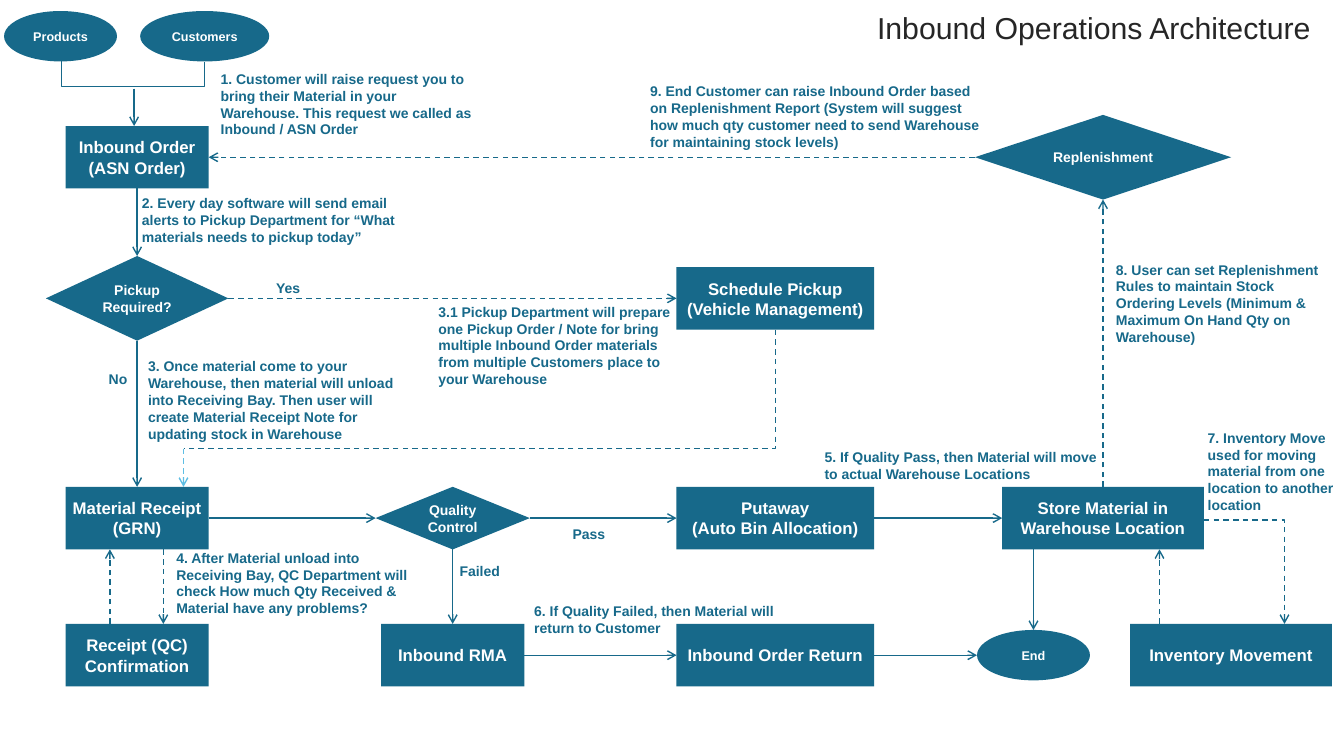
import pptx
import pptx.dml.color
import pptx.enum.dml
import pptx.enum.shapes
import pptx.enum.text
import pptx.oxml
import pptx.oxml.ns
import pptx.util

SHAPES = pptx.enum.shapes.MSO_SHAPE
CONNECTORS = pptx.enum.shapes.MSO_CONNECTOR
ALIGN = pptx.enum.text.PP_ALIGN
MIDDLE = pptx.enum.text.MSO_ANCHOR.MIDDLE
inch = pptx.util.Inches

TEAL, SKY, WHITE, CHARCOAL = "17698A", "5EBEE4", "FFFFFF", "262626"
COLUMNS = {"products": 0.6, "intake": 1.36, "customers": 2.03, "quality": 4.49,
           "putaway": 7.69, "end": 10.25, "store": 10.94, "movement": 12.21}
ROWS = {"sources": 0.36, "order": 1.56, "pickup": 2.96, "receipt": 5.14, "return": 6.5}
BOX_HEIGHT = 0.62
STYLES = {"ellipse": (SHAPES.OVAL, 9),
          "box": (SHAPES.RECTANGLE, 12),
          "decision": (SHAPES.FLOWCHART_DECISION, 10)}
TOP, LEFT, BOTTOM, RIGHT = range(4)

STEPS = [
    ("products", "ellipse", "Products", "products", "sources", 1.12, 0.5),
    ("customers", "ellipse", "Customers", "customers", "sources", 1.28, 0.5),
    ("order", "box", "Inbound Order\n(ASN Order)", "intake", "order", 1.42, BOX_HEIGHT),
    ("pickup", "decision", "Pickup Required?", "intake", "pickup", 1.81, 0.84),
    ("receipt", "box", "Material Receipt (GRN)", "intake", "receipt", 1.42, BOX_HEIGHT),
    ("confirmation", "box", "Receipt (QC) Confirmation", "intake", "return", 1.42, BOX_HEIGHT),
    ("schedule", "box", "Schedule Pickup\n(Vehicle Management)", "putaway", "pickup", 1.96, BOX_HEIGHT),
    ("quality", "decision", "Quality Control", "quality", "receipt", 1.53, 0.84 * 0.74),
    ("rma", "box", "Inbound RMA", "quality", "return", 1.42, BOX_HEIGHT),
    ("putaway", "box", "Putaway\n(Auto Bin Allocation)", "putaway", "receipt", 1.96, BOX_HEIGHT),
    ("returned", "box", "Inbound Order Return", "putaway", "return", 1.96, BOX_HEIGHT),
    ("store", "box", "Store Material in Warehouse Location", "store", "receipt", 2, BOX_HEIGHT),
    ("replenishment", "decision", "Replenishment", "store", "order", 2.54, 0.84),
    ("movement", "box", "Inventory Movement", "movement", "return", 2, BOX_HEIGHT),
    ("end", "ellipse", "End", "end", "return", 1.12, 0.5),
]

LINKS = [
    ("order", BOTTOM, "pickup", TOP, False),
    ("pickup", BOTTOM, "receipt", TOP, False),
    ("receipt", RIGHT, "quality", LEFT, False),
    ("quality", RIGHT, "putaway", LEFT, False),
    ("quality", BOTTOM, "rma", TOP, False),
    ("putaway", RIGHT, "store", LEFT, False),
    ("rma", RIGHT, "returned", LEFT, False),
    ("store", TOP, "replenishment", BOTTOM, True),
    ("replenishment", LEFT, "order", RIGHT, True),
    ("pickup", RIGHT, "schedule", LEFT, True),
]

ARROWS = [
    ((1.33, 0.88), (1.33, 1.25), TEAL, False),
    ((1.62, 5.45), (1.62, 6.19), TEAL, True),
    ((1.09, 6.19), (1.09, 5.45), TEAL, True),
    ((1.82, 4.45), (1.82, 4.83), SKY, True),
    ((10.25, 5.45), (10.25, 6.25), TEAL, False),
    ((8.67, 6.5), (9.69, 6.5), TEAL, False),
    ((11.5, 6.19), (11.5, 5.45), TEAL, True),
]

NOTES = [
    (2.09, 0.65, 2.69, 4, "1. Customer will raise request you to bring their Material in your "
     "Warehouse. This request we called as Inbound / ASN Order"),
    (1.31, 1.88, 2.89, 3, "2. Every day software will send email alerts to Pickup Department for "
     "“What materials needs to pickup today”"),
    (4.25, 2.96, 2.56, 5, "3.1 Pickup Department will prepare one Pickup Order / Note for bring "
     "multiple Inbound Order materials from multiple Customers place to your Warehouse"),
    (2.64, 2.72, 0.62, 1, "Yes"),
    (0.98, 3.63, 0.62, 1, "No"),
    (1.37, 3.5, 2.81, 5, "3. Once material come to your Warehouse, then material will unload into "
     "Receiving Bay. Then user will create Material Receipt Note for updating stock in Warehouse"),
    (4.46, 5.53, 0.62, 1, "Failed"),
    (5.58, 5.16, 0.62, 1, "Pass"),
    (1.65, 5.4, 2.59, 4, "4. After Material unload into Receiving Bay, QC Department will check "
     "How much Qty Received & Material have any problems?"),
    (8.08, 4.4, 2.97, 2, "5. If Quality Pass, then Material will move to actual Warehouse Locations"),
    (5.2, 5.93, 2.97, 2, "6. If Quality Failed, then Material will return to Customer"),
    (11.88, 4.21, 1.45, 5, "7. Inventory Move used for moving material from one location to "
     "another location"),
    (10.97, 2.54, 2.36, 5, "8. User can set Replenishment Rules to maintain Stock Ordering Levels "
     "(Minimum & Maximum On Hand Qty on Warehouse)"),
    (6.35, 0.77, 3.55, 4, "9. End Customer can raise Inbound Order based on Replenishment Report "
     "(System will suggest how much qty customer need to send Warehouse for maintaining stock levels)"),
]


def rgb(code):
    return pptx.dml.color.RGBColor.from_string(code)


def write(frame, text, size, color, bold=True, align=ALIGN.LEFT):
    frame.word_wrap = True
    paragraph = frame.paragraphs[0]
    paragraph.alignment = align
    for number, line in enumerate(text.split("\n")):
        if number:
            paragraph.add_line_break()
        run = paragraph.add_run()
        run.text = line
        run.font.name = "Arial"
        run.font.size = pptx.util.Pt(size)
        run.font.bold = bold
        run.font.color.rgb = rgb(color)


def add_step(slide, style, text, column, row, width, height):
    kind, size = STYLES[style]
    step = slide.shapes.add_shape(
        kind, inch(COLUMNS[column] - width / 2), inch(ROWS[row] - height / 2),
        inch(width), inch(height))
    step.shadow.inherit = False
    step.fill.solid()
    step.fill.fore_color.rgb = rgb(TEAL)
    step.line.fill.background()
    frame = step.text_frame
    frame.margin_left = frame.margin_right = inch(0.05)
    frame.vertical_anchor = MIDDLE
    write(frame, text, size, WHITE, align=ALIGN.CENTER)
    return step


def add_line(slide, start, end, color=TEAL, dashed=False, arrow=True, kind=CONNECTORS.STRAIGHT):
    line = slide.shapes.add_connector(kind, *map(inch, (*start, *end)))
    line.line.color.rgb = rgb(color)
    line.line.width = pptx.util.Pt(1)
    if dashed:
        line.line.dash_style = pptx.enum.dml.MSO_LINE.DASH
    if arrow:
        head = pptx.oxml.parse_xml(
            f'<a:tailEnd {pptx.oxml.ns.nsdecls("a")} type="arrow"/>')
        line.line._get_or_add_ln().append(head)
    line._element.spPr.append(
        pptx.oxml.parse_xml(f'<a:effectLst {pptx.oxml.ns.nsdecls("a")}/>'))
    return line


def add_elbow(slide, start, end, preset, turn=0, flip=False, bend=None, dashed=True, arrow=True):
    width, height = abs(end[0] - start[0]), abs(end[1] - start[1])
    if turn:
        width, height = height, width
    middle = (start[0] + end[0]) / 2, (start[1] + end[1]) / 2
    corner = middle[0] - width / 2, middle[1] - height / 2
    elbow = add_line(slide, corner, (corner[0] + width, corner[1] + height),
                     dashed=dashed, arrow=arrow, kind=CONNECTORS.ELBOW)
    properties = elbow._element.spPr
    frame = properties.get_or_add_xfrm()
    frame.set("rot", str(turn * 60000))
    if flip:
        frame.set("flipH", "1")
    geometry = properties.find(pptx.oxml.ns.qn("a:prstGeom"))
    geometry.set("prst", preset)
    if bend is not None:
        geometry.find(pptx.oxml.ns.qn("a:avLst")).append(pptx.oxml.parse_xml(
            f'<a:gd {pptx.oxml.ns.nsdecls("a")} name="adj1" fmla="val {bend * 100000}"/>'))


def add_note(slide, left, top, width, lines, text):
    note = slide.shapes.add_textbox(*map(inch, (left, top, width, 0.1 + 0.17 * lines)))
    write(note.text_frame, text, 10, TEAL)


def add_title(slide, text):
    title = slide.shapes.title
    title.left, title.top, title.width, title.height = map(inch, (8.37, 0, 4.96, 0.63))
    title.text_frame.vertical_anchor = MIDDLE
    write(title.text_frame, text, 21.6, CHARCOAL, bold=False, align=ALIGN.CENTER)
    title.text_frame.paragraphs[0].line_spacing = 0.7


def main():
    deck = pptx.Presentation()
    deck.slide_width, deck.slide_height = inch(13.33), inch(7.5)
    slide = deck.slides.add_slide(deck.slide_layouts[5])
    steps = {name: add_step(slide, *details) for name, *details in STEPS}
    for source, exit_side, target, entry_side, dashed in LINKS:
        link = add_line(slide, (0, 0), (1, 1), dashed=dashed)
        link.begin_connect(steps[source], exit_side)
        link.end_connect(steps[target], entry_side)
    for start, end, color, dashed in ARROWS:
        add_line(slide, start, end, color, dashed)
    add_elbow(slide, (0.61, 0.61), (2.03, 0.62), "bentConnector3", turn=270, flip=True,
              bend=25, dashed=False, arrow=False)
    add_elbow(slide, (11.94, 5.16), (12.74, 6.19), "bentConnector2")
    add_elbow(slide, (7.69, 3.27), (1.82, 4.45), "bentConnector2", turn=90, arrow=False)
    for note in NOTES:
        add_note(slide, *note)
    add_title(slide, "Inbound Operations Architecture")
    deck.save("out.pptx")


if __name__ == "__main__":
    main()
